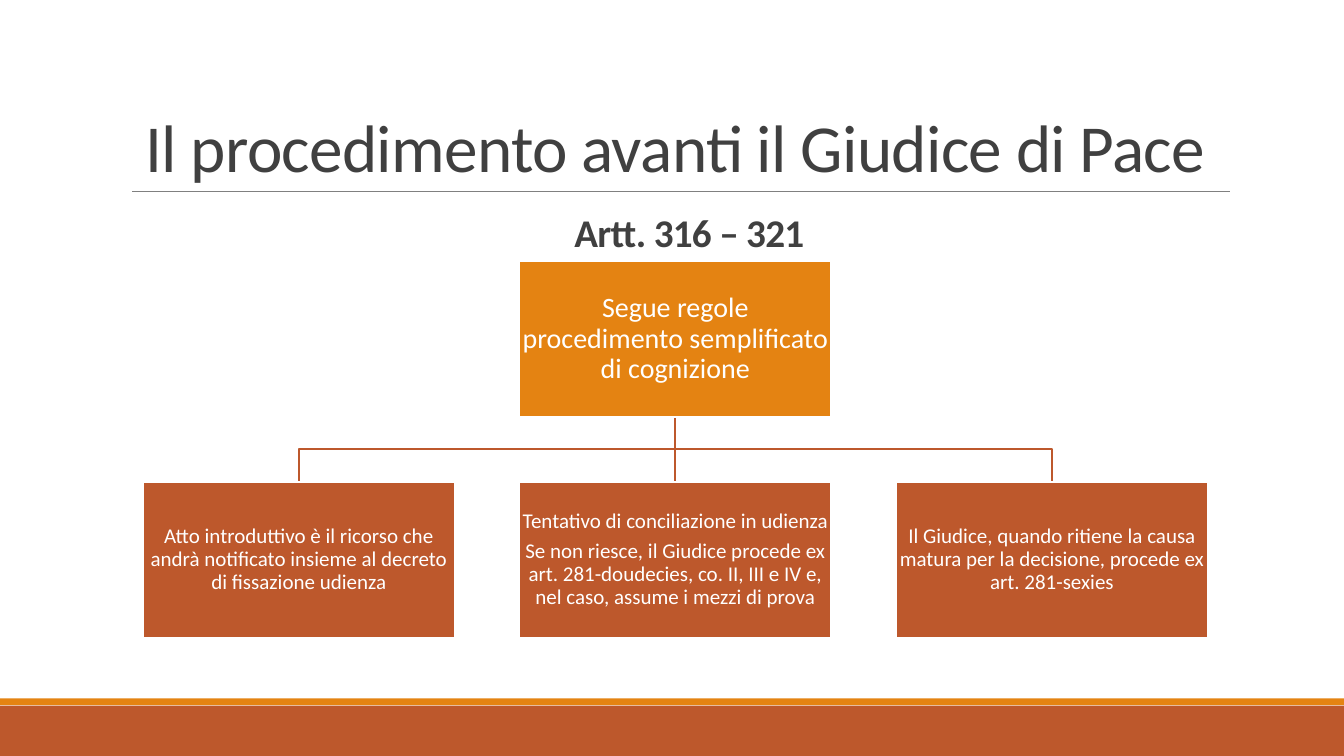
from lxml.etree import SubElement
from pptx import Presentation
from pptx.dml.color import RGBColor
from pptx.enum.shapes import MSO_CONNECTOR as Link, MSO_SHAPE as Shape
from pptx.enum.text import MSO_ANCHOR as Anchor, PP_ALIGN as Align
from pptx.oxml.ns import qn
from pptx.util import Pt

WHITE = RGBColor(0xFF, 0xFF, 0xFF)
ORANGE = RGBColor(0xE4, 0x83, 0x12)
RUST = RGBColor(0xBD, 0x58, 0x2C)
GREY = RGBColor(0x80, 0x80, 0x80)
DARK = RGBColor(0x40, 0x40, 0x40)

BOX_W, BOX_H = 222.5, 111.2
MID = 482.4
STEP = 269
ROOT_Y, LEAF_Y = 186.5, 344.3

ROOT = ["Segue regole procedimento semplificato di cognizione"]
LEAVES = [
    ["Atto introduttivo è il ricorso che andrà notificato insieme al decreto di fissazione udienza"],
    ["Tentativo di conciliazione in udienza",
     "Se non riesce, il Giudice procede ex art. 281-doudecies, co. II, III e IV e, "
     "nel caso, assume i mezzi di prova"],
    ["Il Giudice, quando ritiene la causa matura per la decisione, procede ex art. 281-sexies"],
]


def add_run(para, text, size, color, bold=False):
    """Add one styled run and return it."""
    run = para.add_run()
    run.text = text
    font = run.font
    font.name, font.size, font.bold = "Calibri", Pt(size), bold
    font.color.rgb = color
    return run


def add_head(slide, text, top, width, size, bold=False):
    """Add a centred heading that sits on the bottom of its frame."""
    frame = slide.shapes.add_textbox(Pt(86.4), Pt(top), Pt(width), Pt(114.5)).text_frame
    frame.word_wrap = True
    frame.vertical_anchor = Anchor.BOTTOM
    para = frame.paragraphs[0]
    para.alignment = Align.CENTER
    para.line_spacing = 0.85
    run = add_run(para, text, size, DARK, bold)
    run.font._element.set("spc", "-50")


def add_rect(slide, left, top, width, height, fill):
    """Add a plain filled rectangle without outline."""
    rect = slide.shapes.add_shape(Shape.RECTANGLE, Pt(left), Pt(top), Pt(width), Pt(height))
    rect.shadow.inherit = False
    rect.fill.solid()
    rect.fill.fore_color.rgb = fill
    rect.line.fill.background()
    return rect


def add_box(slide, mid, top, fill, lines, size):
    """Add a chart box centred on mid, with one paragraph per line."""
    box = add_rect(slide, mid - BOX_W / 2, top, BOX_W, BOX_H, fill)
    box.line.color.rgb = WHITE
    box.line.width = Pt(1.25)
    frame = box.text_frame
    frame.word_wrap = True
    frame.vertical_anchor = Anchor.MIDDLE
    frame.margin_left = frame.margin_right = Pt(0.75)
    frame.margin_top = frame.margin_bottom = Pt(0.75)
    for num, text in enumerate(lines):
        para = frame.add_paragraph() if num else frame.paragraphs[0]
        para.alignment = Align.CENTER
        para.line_spacing = 0.9
        para.space_after = Pt(0.35 * size)
        add_run(para, text, size, WHITE)


def add_line(slide, start, end, color, width):
    """Add a straight line without shadow."""
    points = [Pt(val) for val in (*start, *end)]
    line = slide.shapes.add_connector(Link.STRAIGHT, *points)
    line.line.color.rgb = color
    line.line.width = Pt(width)
    SubElement(line._element.spPr, qn("a:effectLst"))


def add_elbow(slide, mid):
    """Add the bent branch from the root box to the leaf at mid."""
    top = ROOT_Y + BOX_H
    bend = (top + LEAF_Y) / 2
    path = slide.shapes.build_freeform(Pt(MID), Pt(top))
    turns = [(MID, bend), (mid, bend), (mid, LEAF_Y)]
    path.add_line_segments([(Pt(x), Pt(y)) for x, y in turns], close=False)
    branch = path.convert_to_shape()
    branch.shadow.inherit = False
    branch.fill.background()
    branch.line.color.rgb = RUST
    branch.line.width = Pt(1.25)


def main():
    """Build the slide and save it."""
    deck = Presentation()
    deck.slide_width, deck.slide_height = Pt(960), Pt(540)
    slide = deck.slides.add_slide(deck.slide_layouts[6])

    add_rect(slide, 0, 504, 960, 36, RUST)
    add_rect(slide, 0, 498.8, 960, 5, ORANGE)
    add_line(slide, (94.4, 136.8), (878.8, 136.8), GREY, 0.5)
    add_head(slide, "Il procedimento avanti il Giudice di Pace", 22.3, 792, 48)
    add_head(slide, "Artt. 316 – 321", 71.3, 812, 28, True)

    mids = [MID - STEP, MID, MID + STEP]
    add_elbow(slide, mids[2])
    add_line(slide, (MID, ROOT_Y + BOX_H), (MID, LEAF_Y), RUST, 1.25)
    add_elbow(slide, mids[0])
    add_box(slide, MID, ROOT_Y, ORANGE, ROOT, 20)
    for mid, lines in zip(mids, LEAVES):
        add_box(slide, mid, LEAF_Y, RUST, lines, 15)

    deck.save("out.pptx")


if __name__ == "__main__":
    main()
